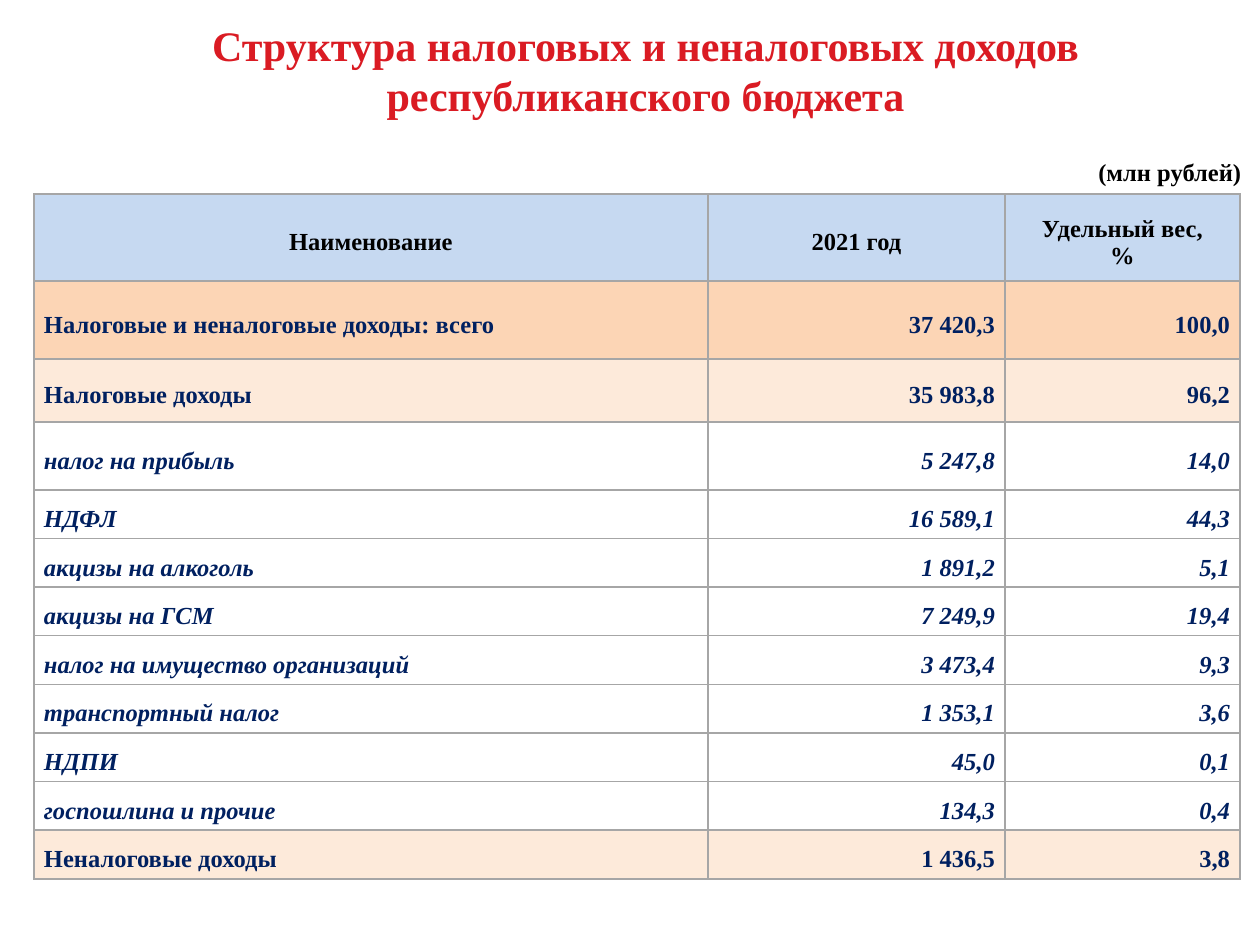
from lxml.etree import SubElement
from pptx import Presentation
from pptx.dml.color import RGBColor
from pptx.enum.text import MSO_ANCHOR, PP_ALIGN
from pptx.oxml.ns import qn
from pptx.util import Pt

PX = 914400 / 126
FONT = "Times New Roman"
COLORS = {
    "title": "DA1B23", "black": "000000", "navy": "002060", "border": "A6A6A6",
    "header": "C6D9F1", "total": "FCD5B5", "group": "FDEADA",
}
TITLE = "Структура налоговых и неналоговых доходов республиканского бюджета"
UNITS = "(млн рублей)"
ROWS = [
    ("header", "Наименование", "2021 год", "Удельный вес,\n%"),
    ("total", "Налоговые и неналоговые доходы: всего", "37 420,3", "100,0"),
    ("group", "Налоговые доходы", "35 983,8", "96,2"),
    ("item", "налог на прибыль", "5 247,8", "14,0"),
    ("item", "НДФЛ", "16 589,1", "44,3"),
    ("item", "акцизы на алкоголь", "1 891,2", "5,1"),
    ("item", "акцизы на ГСМ", "7 249,9", "19,4"),
    ("item", "налог на имущество организаций", "3 473,4", "9,3"),
    ("item", "транспортный налог", "1 353,1", "3,6"),
    ("item", "НДПИ", "45,0", "0,1"),
    ("item", "госпошлина и прочие", "134,3", "0,4"),
    ("group", "Неналоговые доходы", "1 436,5", "3,8"),
]
COL_WIDTHS = [674, 297, 235]
TOP_HEIGHTS = [87, 78, 63, 68]
TABLE_LEFT, TABLE_TOP, TABLE_HEIGHT = 34, 194, 685


def px(n):
    return round(n * PX)


def rgb(name):
    return RGBColor.from_string(COLORS[name])


def write(tf, text, size, color, align, italic=False):
    p = tf.paragraphs[0]
    p.alignment = align
    for i, line in enumerate(text.split("\n")):
        if i:
            p.add_line_break()
        r = p.add_run()
        r.text = line
        r.font.name = FONT
        r.font.size = Pt(size)
        r.font.bold = True
        r.font.italic = italic
        r.font.color.rgb = rgb(color)


def set_borders(cell):
    tcPr = cell._tc.get_or_add_tcPr()
    for i, side in enumerate(("lnL", "lnR", "lnT", "lnB")):
        ln = tcPr.makeelement(qn(f"a:{side}"), {"w": str(Pt(1))})
        fill = SubElement(ln, qn("a:solidFill"))
        SubElement(fill, qn("a:srgbClr"), val=COLORS["border"])
        tcPr.insert(i, ln)


def add_title(s):
    sp = s.shapes.title
    sp.left, sp.top, sp.width, sp.height = map(px, (40, 13, 1211, 115))
    sp.text_frame.vertical_anchor = MSO_ANCHOR.TOP
    sp.text_frame.word_wrap = True
    write(sp.text_frame, TITLE, 24, "title", PP_ALIGN.CENTER)


def add_units(s):
    sp = s.shapes.add_textbox(*map(px, (1086, 151, 174, 43)))
    sp.text_frame.word_wrap = True
    write(sp.text_frame, UNITS, 14, "black", PP_ALIGN.LEFT)


def add_income_table(s):
    table = s.shapes.add_table(
        len(ROWS), len(COL_WIDTHS), px(TABLE_LEFT), px(TABLE_TOP),
        px(sum(COL_WIDTHS)), px(TABLE_HEIGHT)).table
    table.first_row = table.horz_banding = False
    for col, width in zip(table.columns, COL_WIDTHS):
        col.width = px(width)
    rest = len(ROWS) - len(TOP_HEIGHTS)
    row_height = (TABLE_HEIGHT - sum(TOP_HEIGHTS)) / rest
    for row, height in zip(table.rows, TOP_HEIGHTS + [row_height] * rest):
        row.height = px(height)
    for i, (kind, *texts) in enumerate(ROWS):
        for j, text in enumerate(texts):
            cell = table.cell(i, j)
            cell.vertical_anchor = MSO_ANCHOR.MIDDLE
            cell.margin_left = cell.margin_right = cell.margin_top = px(10)
            cell.margin_bottom = 0
            if kind in COLORS:
                cell.fill.solid()
                cell.fill.fore_color.rgb = rgb(kind)
            else:
                cell.fill.background()
            set_borders(cell)
            if kind == "header":
                color, align = "black", PP_ALIGN.CENTER
            else:
                color, align = "navy", PP_ALIGN.RIGHT if j else PP_ALIGN.LEFT
            write(cell.text_frame, text, 14, color, align, kind == "item")


def main():
    prs = Presentation()
    prs.slide_width, prs.slide_height = px(1260), px(945)
    s = prs.slides.add_slide(prs.slide_layouts[5])
    add_title(s)
    add_units(s)
    add_income_table(s)
    prs.save("out.pptx")


if __name__ == "__main__":
    main()
